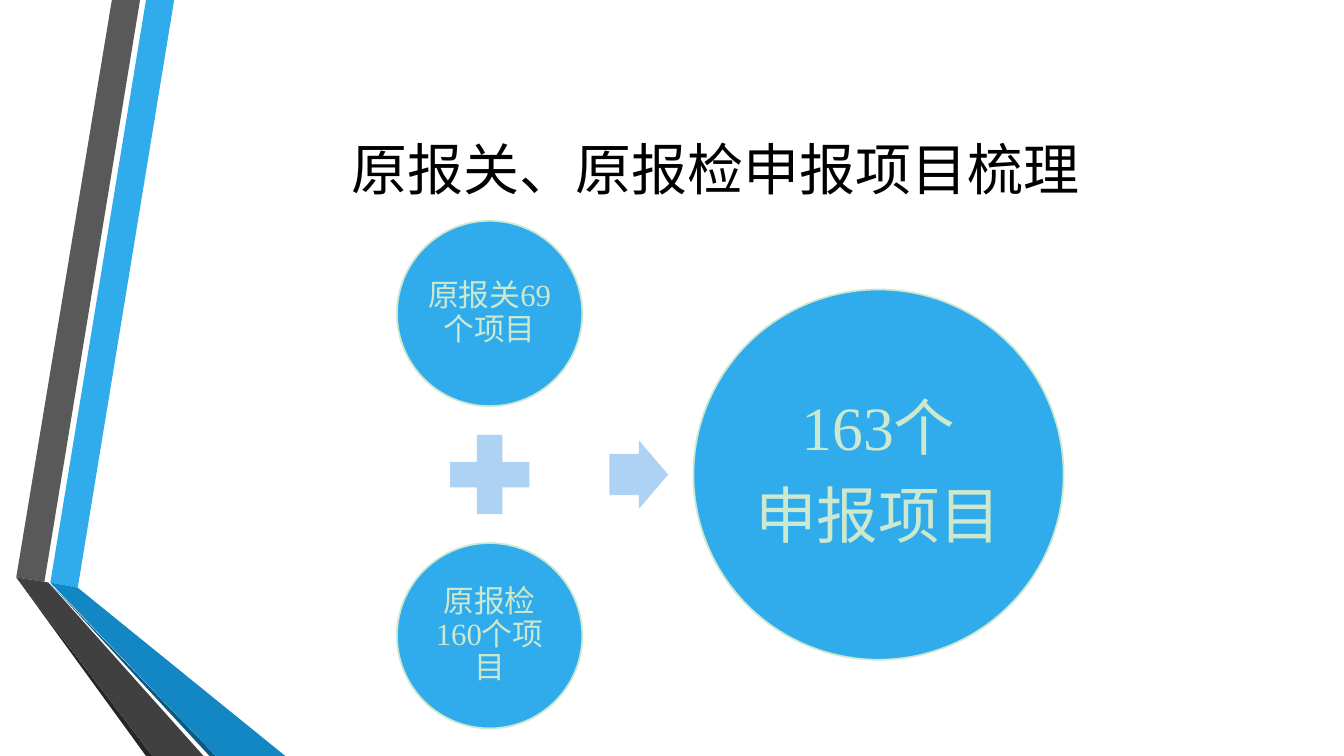
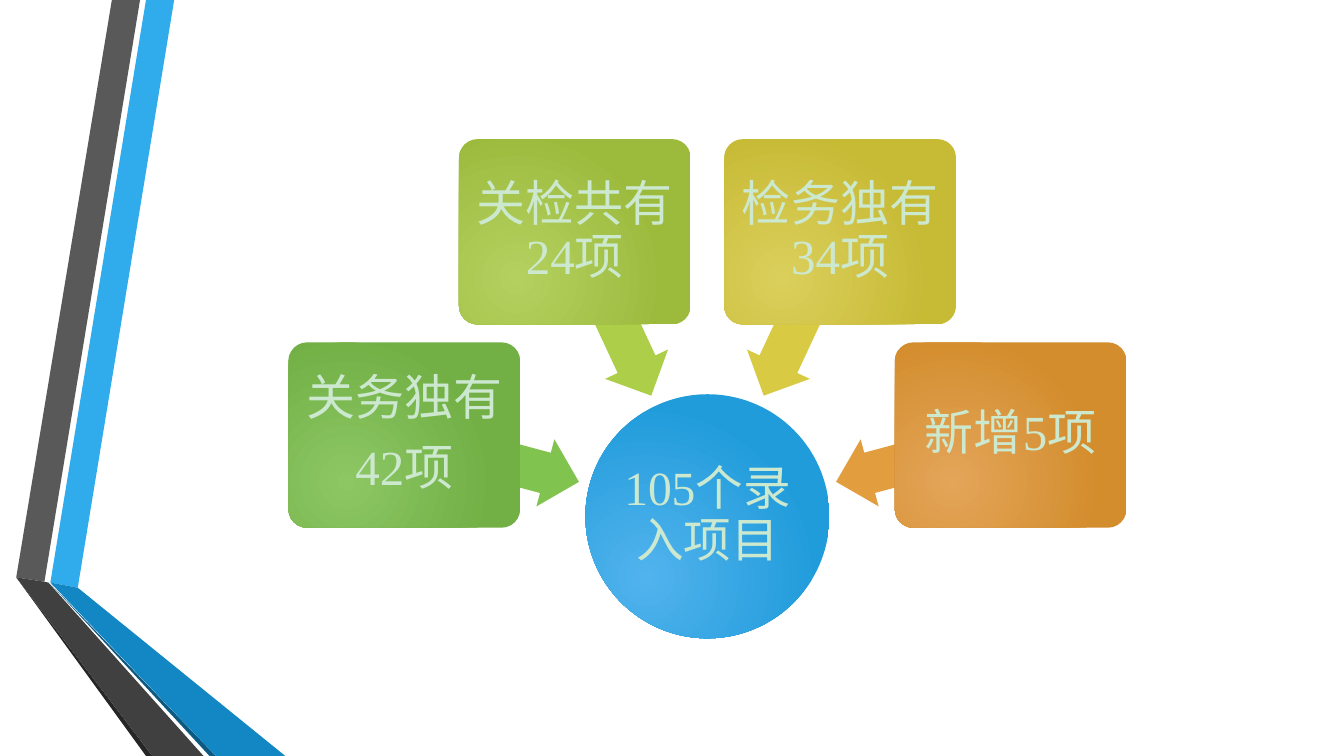
"""Build two slides on merging customs and inspection declaration items."""
from math import cos, radians, sin

from lxml.etree import SubElement
from pptx import Presentation
from pptx.dml.color import RGBColor
from pptx.enum.shapes import MSO_SHAPE
from pptx.enum.text import MSO_ANCHOR, PP_ALIGN
from pptx.oxml.ns import qn
from pptx.util import Cm, Pt

COLORS = {
    "background": "FFFFFF",
    "title": "000000",
    "pale": "CCE8CF",
    "blue": "30ACEC",
    "light_blue": "AED2F4",
    "deep_blue": "1287C3",
    "navy": "0C5A82",
    "grey": "595959",
    "charcoal": "404040",
    "black": "262626",
}

BANDS = [
    ("blue", [(1.27, 14.68), (1.96, 14.81), (4.39, 0), (3.68, 0)]),
    ("grey", [(3.53, 0), (2.82, 0), (0.41, 14.55), (1.12, 14.66)]),
    ("black", [(0.41, 14.55), (3.68, 19.05), (3.84, 19.05)]),
    ("navy", [(1.27, 14.71), (5.28, 19.05), (5.44, 19.05)]),
    ("deep_blue", [(1.27, 14.68), (5.44, 19.05), (7.19, 19.05), (1.96, 14.81)]),
    ("charcoal", [(0.41, 14.55), (3.84, 19.05), (5.13, 19.05), (1.22, 14.68),
                  (1.12, 14.66)]),
]

SOURCES = [
    ("关务独有\n42项", "80C34F", ("8CC764", "72AF45")),
    ("关检共有24项", "ADCE49", ("B4D160", "9CBB3D")),
    ("检务独有34项", "D8CB43", ("DBCF5C", "C7BA35")),
    ("新增5项", "E29D3E", ("E4A559", "D38D2D")),
]


def rgb(color):
    return RGBColor.from_string(COLORS.get(color, color))


def write_text(frame, text, size=22, font="Times New Roman", color="pale",
               inset=0.07, spacing=0.9, after=0.35):
    frame.word_wrap = True
    frame.vertical_anchor = MSO_ANCHOR.MIDDLE
    frame.margin_left = frame.margin_right = Cm(inset)
    frame.margin_top = frame.margin_bottom = Cm(inset)
    frame.text = text
    for paragraph in frame.paragraphs:
        paragraph.alignment = PP_ALIGN.CENTER
        paragraph.line_spacing = spacing
        paragraph.space_after = Pt(round(size * after, 1))
        paragraph.font.size = Pt(size)
        paragraph.font.name = font
        paragraph.font.color.rgb = rgb(color)


class Deck:
    def __init__(self):
        self.prs = Presentation()
        self.prs.slide_width, self.prs.slide_height = Cm(33.87), Cm(19.05)
        self.slide = None
        backdrop = self.prs.slide_master.background.fill
        backdrop.solid()
        backdrop.fore_color.rgb = rgb("background")

    def add_slide(self, layout):
        self.slide = self.prs.slides.add_slide(self.prs.slide_layouts[layout])

    def master_bands(self):
        master_tree = self.prs.slide_master.shapes.element
        for number, (color, corners) in enumerate(BANDS):
            points = [(Cm(x), Cm(y)) for x, y in corners]
            outline = self.slide.shapes.build_freeform(*points[0])
            outline.add_line_segments(points[1:])
            band = outline.convert_to_shape()
            self.paint(band, color)
            band.element.nvSpPr.cNvPr.set("id", str(100 + number))
            master_tree.insert(2 + number, band.element)

    def title(self, text):
        heading = self.slide.shapes.title
        heading.left, heading.top = Cm(4.11), Cm(1.9)
        heading.width, heading.height = Cm(27.84), Cm(4.88)
        write_text(heading.text_frame, text, size=40, font="Calibri",
                   color="title", inset=0.25, after=0)

    def paint(self, shape, fill, outline=None):
        shape.shadow.inherit = False
        if isinstance(fill, tuple):
            shape.fill.gradient()
            for stop, color in zip(shape.fill.gradient_stops, fill):
                stop.color.rgb = rgb(color)
            gradient = shape.element.spPr.find(qn("a:gradFill"))
            gradient.remove(gradient.find(qn("a:lin")))
            radial = SubElement(gradient, qn("a:path"), {"path": "circle"})
            SubElement(radial, qn("a:fillToRect"),
                       dict(l="50000", t="100000", r="100000", b="50000"))
        else:
            shape.fill.solid()
            shape.fill.fore_color.rgb = rgb(fill)
        if outline:
            shape.line.color.rgb = rgb(outline)
            shape.line.width = Pt(1.25)
        else:
            shape.line.fill.background()

    def figure(self, kind, center, extent, fill, outline=None, adjust=(),
               rotation=0, text=None, **text_format):
        (x, y), (width, height) = center, extent
        shape = self.slide.shapes.add_shape(
            kind, Cm(x - width / 2), Cm(y - height / 2), Cm(width), Cm(height))
        for index, value in enumerate(adjust):
            shape.adjustments[index] = value
        shape.rotation = rotation
        self.paint(shape, fill, outline)
        if text:
            write_text(shape.text_frame, text, **text_format)

    def circle(self, center, diameter, text, fill="blue", outline="pale",
               **text_format):
        self.figure(MSO_SHAPE.OVAL, center, (diameter, diameter), fill, outline,
                    text=text, **text_format)

    def arrow(self, kind, center, extent, fill, rotation=0):
        self.figure(kind, center, extent, fill, adjust=(0.6, 0.5),
                    rotation=rotation)

    def card(self, center, text, fill):
        self.figure(MSO_SHAPE.ROUNDED_RECTANGLE, center, (5.84, 4.67), fill,
                    adjust=(0.1,), text=text, size=35, inset=0.17)


def build_sum(deck):
    deck.title("原报关、原报检申报项目梳理")
    column, middle, step = 12.34, 11.96, 4.06
    deck.circle((column, middle - step), 4.67, "原报关69个项目")
    deck.figure(MSO_SHAPE.MATH_PLUS, (column, middle), (2.72, 2.72), "light_blue")
    deck.circle((column, middle + step), 4.67, "原报检160个项目")
    deck.arrow(MSO_SHAPE.RIGHT_ARROW, (16.1, middle), (1.48, 1.73), "light_blue")
    deck.circle((22.14, middle), 9.33, "163个\n申报项目", size=44, inset=0.15)


def build_sources(deck):
    hub_x, hub_y = 17.83, 13.01
    deck.circle((hub_x, hub_y), 6.15, "105个录入项目", fill=("51B3ED", "219CDB"),
                outline=None, size=34, inset=0.05)
    for index, (label, arrow_color, card_fill) in enumerate(SOURCES):
        angle = 15 + 50 * index

        def at(radius):
            return (hub_x - radius * cos(radians(angle)),
                    hub_y - radius * sin(radians(angle)))

        deck.arrow(MSO_SHAPE.LEFT_ARROW, at(5.64), (4.57, 1.75), arrow_color,
                   rotation=180 + angle)
        deck.card(at(7.91), label, card_fill)


def main():
    deck = Deck()
    deck.add_slide(5)
    deck.master_bands()
    build_sum(deck)
    deck.add_slide(6)
    build_sources(deck)
    deck.prs.save("out.pptx")


if __name__ == "__main__":
    main()
